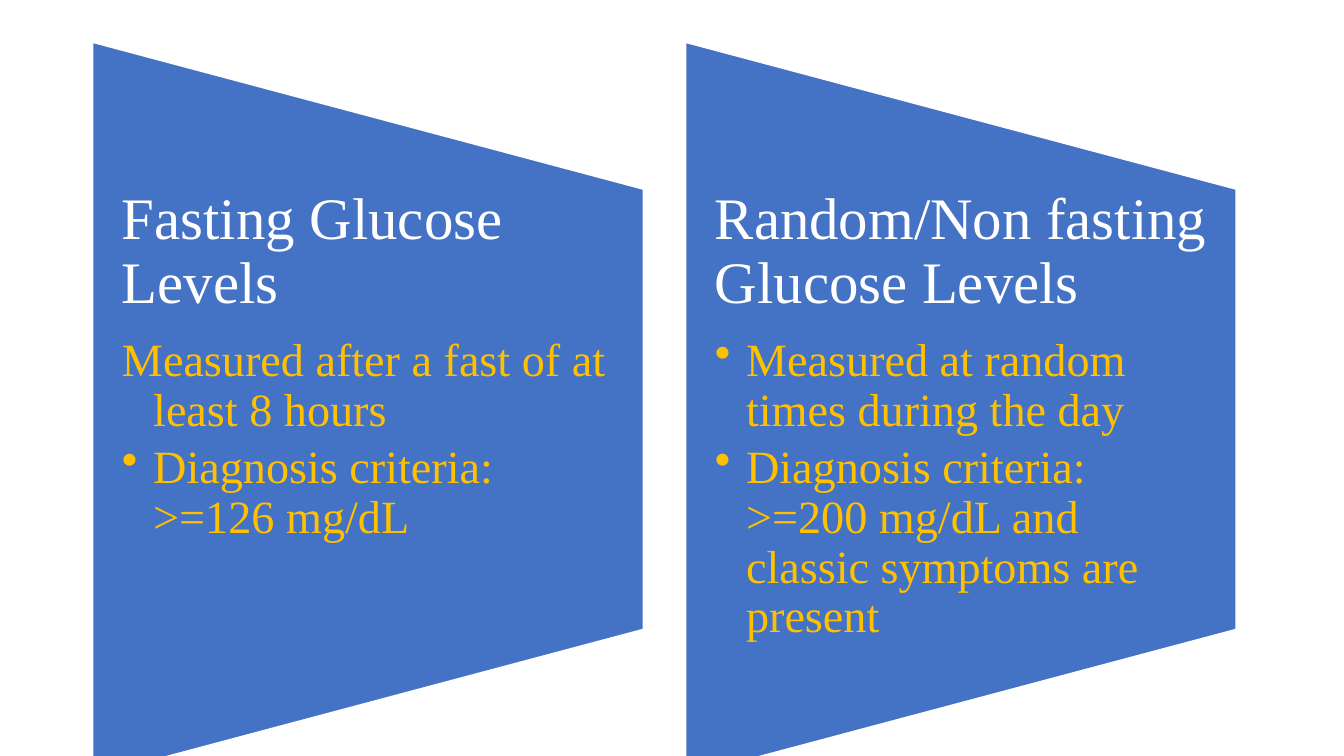
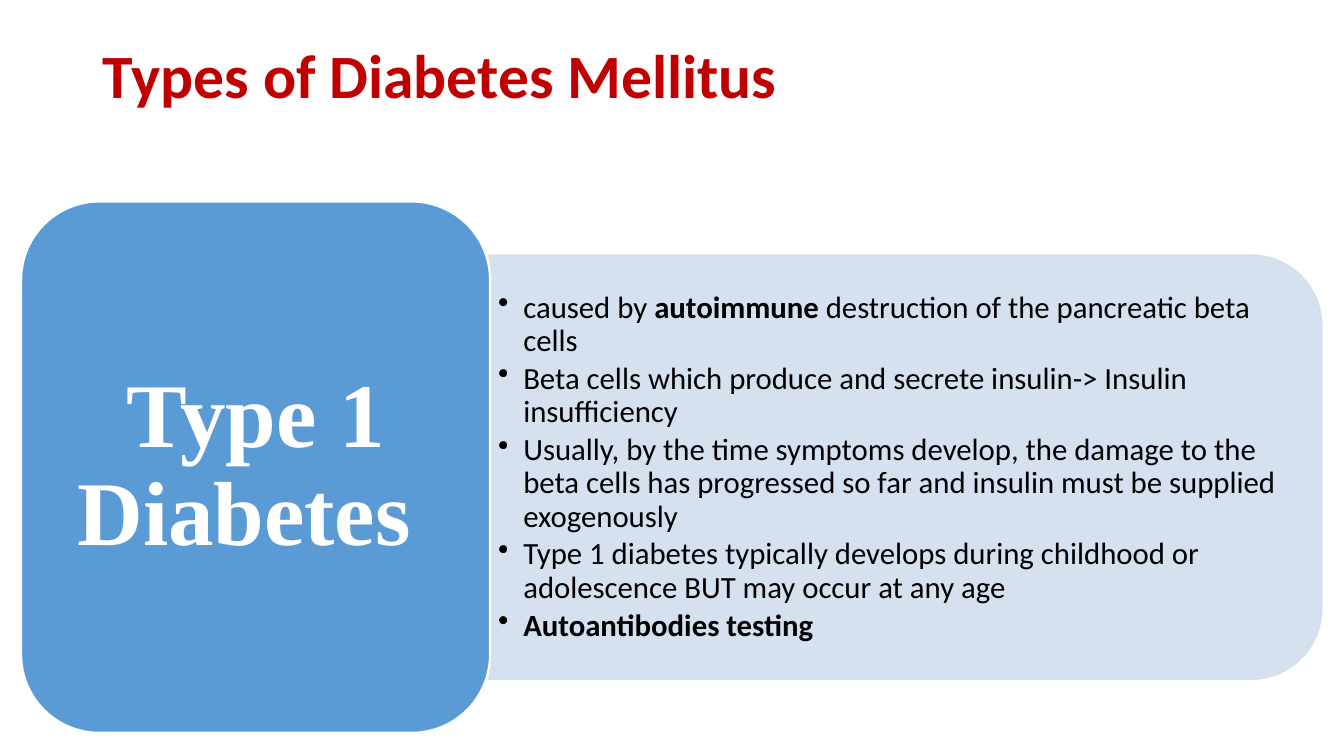
from lxml import etree
from pptx import Presentation
from pptx.dml.color import RGBColor
from pptx.enum.shapes import MSO_SHAPE
from pptx.enum.text import MSO_ANCHOR, PP_ALIGN
from pptx.oxml.ns import qn
from pptx.util import Inches, Pt

WHITE = RGBColor(0xFF, 0xFF, 0xFF)
BLACK = RGBColor(0, 0, 0)
BLUE = RGBColor(0x44, 0x72, 0xC4)
SKY = RGBColor(0x5B, 0x9B, 0xD5)
PALE = RGBColor(0xD2, 0xDE, 0xEF)
GOLD = RGBColor(0xFF, 0xC0, 0x00)
RED = RGBColor(0xC0, 0x00, 0x00)
SERIF, SANS = "Times New Roman", "Calibri"
FLAG = MSO_SHAPE.FLOWCHART_MANUAL_OPERATION
TAB = MSO_SHAPE.ROUND_2_SAME_RECTANGLE
ROUND = MSO_SHAPE.ROUNDED_RECTANGLE
TOP, MIDDLE = MSO_ANCHOR.TOP, MSO_ANCHOR.MIDDLE
LEFT, CENTER = PP_ALIGN.LEFT, PP_ALIGN.CENTER
TITLE_ONLY, BLANK = 5, 6

TESTS = [
    ("Fasting Glucose Levels",
     [("Measured after a fast of at least 8 hours", False),
      ("Diagnosis criteria: >=126 mg/dL", True)]),
    ("Random/Non fasting Glucose Levels",
     [("Measured at random times during the day", True),
      ("Diagnosis criteria: >=200 mg/dL and classic symptoms are present", True)]),
]
FACTS = [
    [("caused by ", False), ("autoimmune ", True),
     ("destruction of the pancreatic beta cells", False)],
    [("Beta cells which produce and secrete insulin-> Insulin insufficiency", False)],
    [("Usually, by the time symptoms develop, the damage to the beta cells has "
      "progressed so far and insulin must be supplied exogenously", False)],
    [("Type 1 diabetes typically develops during childhood or adolescence BUT "
      "may occur at any age", False)],
    [("Autoantibodies testing", True)],
]


def style(para, name, size, color, bold=None, align=LEFT, after=0):
    """Format a paragraph, with the space after as a share of the text size."""
    para.alignment = align
    para.line_spacing = 0.9
    para.space_after = Pt(size * after)
    font = para.font
    font.name, font.size, font.bold = name, Pt(size), bold
    font.color.rgb = color


def hang(para, indent, dot=True):
    """Give a paragraph a hanging indent and, if asked, a bullet."""
    para.level = 1
    props = para._p.get_or_add_pPr()
    props.set("marL", str(Inches(indent)))
    props.set("indent", str(-Inches(indent)))
    if dot:
        etree.SubElement(props, qn("a:buChar")).set("char", "•")


def fade(shape, share):
    """Make the fill and line of a shape partly clear."""
    for color in shape._element.spPr.iter(qn("a:srgbClr")):
        etree.SubElement(color, qn("a:alpha")).set("val", str(share * 1000))


def panel(slide, kind, box, fill, line, width=1, turn=0):
    """Draw a preset shape that fills the box once it is turned."""
    x, y, w, h = box
    if turn in (90, 270):
        x, y, w, h = x + (w - h) / 2, y + (h - w) / 2, h, w
    shape = slide.shapes.add_shape(kind, *map(Inches, (x, y, w, h)))
    shape.rotation = turn
    shape.shadow.inherit = False
    shape.fill.solid()
    shape.fill.fore_color.rgb = fill
    shape.line.color.rgb = line
    shape.line.width = Pt(width)
    return shape


def label(slide, box, side, edge, anchor=TOP):
    """Add an empty wrapping text box and return its frame."""
    frame = slide.shapes.add_textbox(*map(Inches, box)).text_frame
    frame.word_wrap = True
    frame.vertical_anchor = anchor
    frame.margin_left = frame.margin_right = Inches(side)
    frame.margin_top = frame.margin_bottom = Inches(edge)
    return frame


def test_card(slide, box, head, items):
    """Draw one glucose test with its heading and points."""
    x, y, w, h = box
    panel(slide, FLAG, box, BLUE, WHITE, turn=270)
    frame = label(slide, (x, y + h / 5, w, h * 3 / 5), 0.29, 0)
    para = frame.paragraphs[0]
    para.text = head
    style(para, SERIF, 42, WHITE, after=0.35)
    for text, dot in items:
        para = frame.add_paragraph()
        para.text = text
        hang(para, 0.31, dot)
        style(para, SERIF, 33, GOLD, after=0.15)


def fact_panel(slide, box):
    """Draw the pale panel with its bulleted facts."""
    x, y, w, h = box
    fade(panel(slide, TAB, box, PALE, PALE, turn=90), 90)
    pad = 0.21
    frame = label(slide, (x, y + pad, w - pad, h - 2 * pad), 0.09, 0.05, MIDDLE)
    for i, parts in enumerate(FACTS):
        para = frame.add_paragraph() if i else frame.paragraphs[0]
        hang(para, 0.25)
        style(para, SANS, 22, BLACK, after=0.15)
        for text, bold in parts:
            run = para.add_run()
            run.text = text
            run.font.bold = bold


def type_tile(slide, box, text):
    """Draw the rounded tile that names the type."""
    x, y, w, h = box
    panel(slide, ROUND, box, SKY, WHITE, 1.5)
    pad = 0.23
    inner = (x + pad, y + pad, w - 2 * pad, h - 2 * pad)
    para = label(slide, inner, 0.27, 0.14, MIDDLE).paragraphs[0]
    para.text = text
    style(para, SERIF, 65, WHITE, True, CENTER)


def heading(slide, box, text):
    """Place and format the slide title."""
    title = slide.shapes.title
    title.left, title.top, title.width, title.height = map(Inches, box)
    title.text_frame.vertical_anchor = TOP
    para = title.text_frame.paragraphs[0]
    para.text = text
    style(para, SANS, 44, RED, True)


def test_slide(deck):
    """Build the slide that compares the two glucose tests."""
    slide = deck.slides.add_slide(deck.slide_layouts[BLANK])
    for i, (head, items) in enumerate(TESTS):
        test_card(slide, (0.92 + i * 5.88, 0.42, 5.46, 7.28), head, items)


def type_slide(deck):
    """Build the slide on type 1 diabetes."""
    slide = deck.slides.add_slide(deck.slide_layouts[TITLE_ONLY])
    heading(slide, (0.92, 0.4, 11.5, 1.45), "Types of Diabetes Mellitus")
    fact_panel(slide, (4.85, 2.53, 8.26, 4.21))
    type_tile(slide, (0.21, 2, 4.65, 5.27), "Type 1 Diabetes ")


def main():
    """Build and save the deck."""
    deck = Presentation()
    deck.slide_width, deck.slide_height = Inches(13.33), Inches(7.5)
    test_slide(deck)
    type_slide(deck)
    deck.save("out.pptx")


if __name__ == "__main__":
    main()
